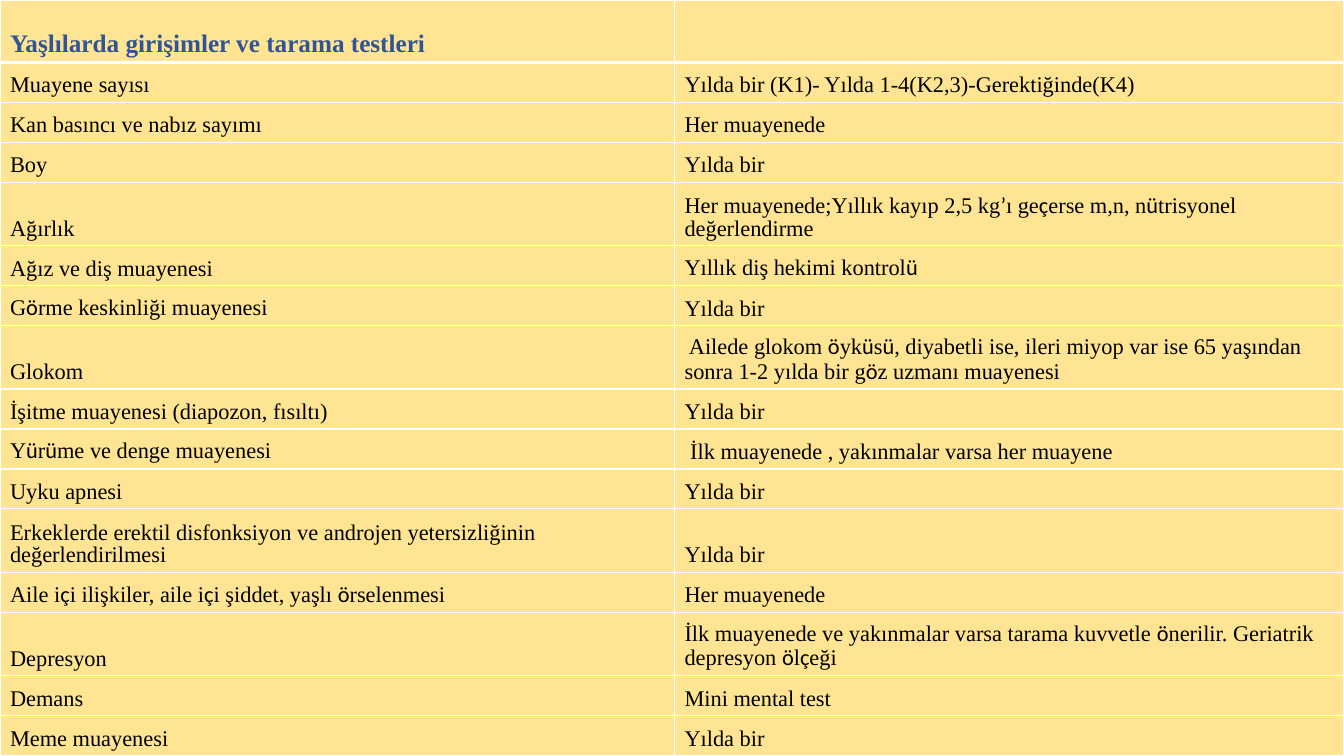
from itertools import groupby

from lxml import etree
from pptx import Presentation
from pptx.dml.color import RGBColor
from pptx.enum.text import MSO_ANCHOR
from pptx.oxml.ns import qn
from pptx.util import Inches, Pt

BOTTOM = MSO_ANCHOR.BOTTOM
SLIDE_W, SLIDE_H = 13.33, 7.5
TEST_COLUMN_W = 6.69
HEADING_H, TWO_LINE_H = 0.62, 0.63
TWO_LINE_LENGTH = 60  # longer entries wrap to a second line
CREAM, WHITE, BLUE, BLACK = "FFE593", "FFFFFF", "2F5597", "000000"
MAIN_FONT, ACCENT_FONT = "Times New Roman", "Calibri"
ACCENT_LETTERS = "’çöü"  # letters set in the accent font

HEADING = ("Yaşlılarda girişimler ve tarama testleri", "")
SCREENINGS = [
    ("Muayene sayısı", "Yılda bir (K1)- Yılda 1-4(K2,3)-Gerektiğinde(K4)"),
    ("Kan basıncı ve nabız sayımı", "Her muayenede"),
    ("Boy", "Yılda bir"),
    ("Ağırlık", "Her muayenede;Yıllık kayıp 2,5 kg’ı geçerse m,n, nütrisyonel değerlendirme"),
    ("Ağız ve diş muayenesi", "Yıllık diş hekimi kontrolü"),
    ("Görme keskinliği muayenesi", "Yılda bir"),
    ("Glokom", " Ailede glokom öyküsü, diyabetli ise, ileri miyop var ise 65 yaşından "
               "sonra 1-2 yılda bir göz uzmanı muayenesi"),
    ("İşitme muayenesi (diapozon, fısıltı)", "Yılda bir"),
    ("Yürüme ve denge muayenesi", " İlk muayenede , yakınmalar varsa her muayene"),
    ("Uyku apnesi", "Yılda bir"),
    ("Erkeklerde erektil disfonksiyon ve androjen yetersizliğinin değerlendirilmesi",
     "Yılda bir"),
    ("Aile içi ilişkiler, aile içi şiddet, yaşlı örselenmesi", "Her muayenede"),
    ("Depresyon", "İlk muayenede ve yakınmalar varsa tarama kuvvetle önerilir. "
                  "Geriatrik depresyon ölçeği"),
    ("Demans", "Mini mental test"),
    ("Meme muayenesi", "Yılda bir"),
]


def rgb(hex_colour):
    return RGBColor.from_string(hex_colour)


def set_borders(cell, bottom_width=1, top_width=1):
    properties = cell._tc.get_or_add_tcPr()
    widths = {"a:lnL": 1, "a:lnR": 1, "a:lnT": top_width, "a:lnB": bottom_width}
    for position, (side, width) in enumerate(widths.items()):
        line = etree.Element(qn(side), w=str(Pt(width)))
        fill = etree.SubElement(line, qn("a:solidFill"))
        etree.SubElement(fill, qn("a:srgbClr"), val=WHITE)
        properties.insert(position, line)  # borders come before the fill


def write_text(cell, text, size, colour, bold):
    paragraph = cell.text_frame.paragraphs[0]
    paragraph.line_spacing = 0.9
    for accented, letters in groupby(text, lambda letter: letter in ACCENT_LETTERS):
        run = paragraph.add_run()
        run.text = "".join(letters)
        run.font.name = ACCENT_FONT if accented else MAIN_FONT
        run.font.size = Pt(size)
        run.font.bold = bold
        run.font.color.rgb = rgb(colour)


def add_screening_table(slide, left, top, width, height):
    entries = [HEADING] + SCREENINGS
    table = slide.shapes.add_table(
        len(entries), 2, Inches(left), Inches(top), Inches(width), Inches(height)).table
    table.columns[0].width = Inches(TEST_COLUMN_W)
    table.columns[1].width = Inches(width - TEST_COLUMN_W)

    # One-line rows share the height left by the heading and the two-line rows
    wraps = [max(map(len, entry)) > TWO_LINE_LENGTH for entry in SCREENINGS]
    one_line_h = (height - HEADING_H - sum(wraps) * TWO_LINE_H) / wraps.count(False)
    heights = [HEADING_H] + [TWO_LINE_H if wrap else one_line_h for wrap in wraps]

    for row_index, (entry, row_height) in enumerate(zip(entries, heights)):
        table.rows[row_index].height = Inches(row_height)
        is_heading = row_index == 0
        for column, text in enumerate(entry):
            cell = table.cell(row_index, column)
            cell.vertical_anchor = BOTTOM
            cell.fill.solid()
            cell.fill.fore_color.rgb = rgb(CREAM)
            set_borders(cell, 3 if is_heading else 1, 3 if row_index == 1 else 1)
            write_text(cell, text, 18 if is_heading else 16,
                       BLUE if is_heading else BLACK, is_heading)


def main():
    deck = Presentation()
    deck.slide_width, deck.slide_height = Inches(SLIDE_W), Inches(SLIDE_H)
    slide = deck.slides.add_slide(deck.slide_layouts[6])
    add_screening_table(slide, 0, 0, SLIDE_W, SLIDE_H)
    deck.save("out.pptx")


if __name__ == "__main__":
    main()
